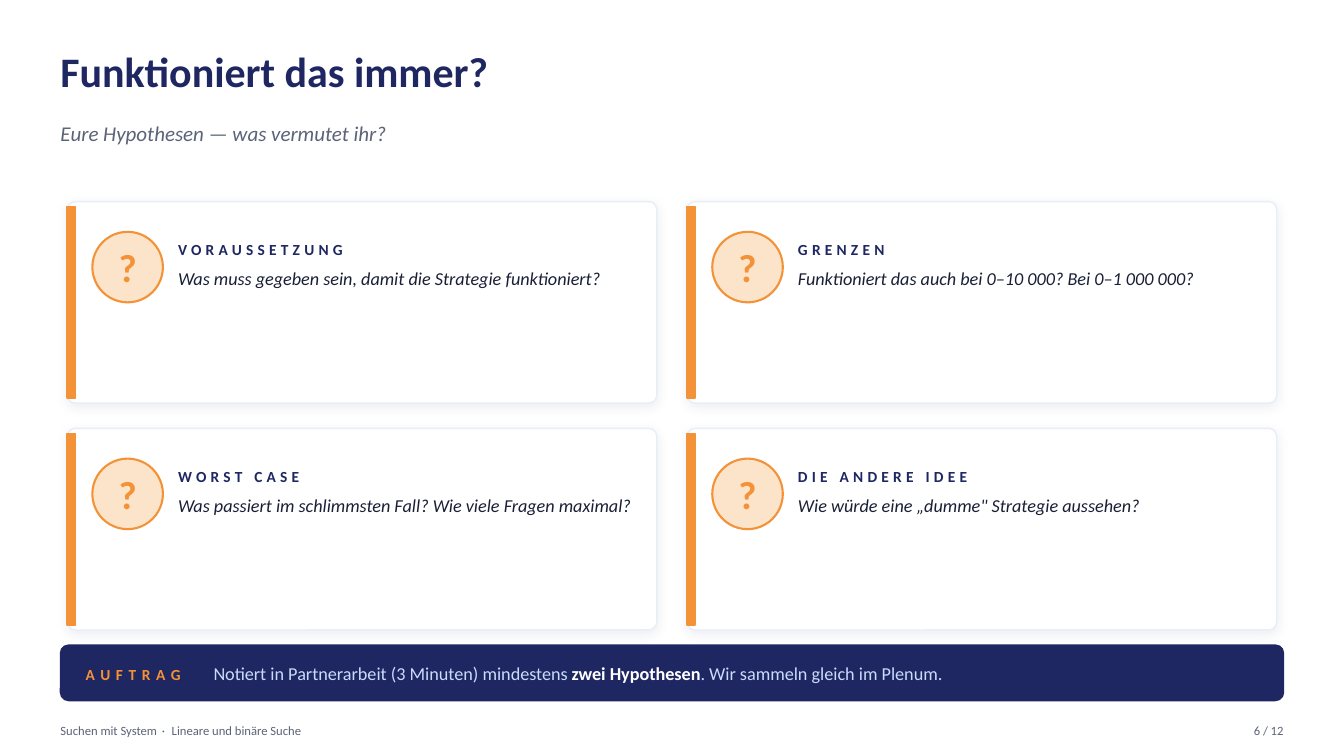
from lxml.etree import SubElement
from pptx import Presentation
from pptx.dml.color import RGBColor
from pptx.enum.shapes import MSO_SHAPE
from pptx.enum.text import MSO_ANCHOR, PP_ALIGN
from pptx.oxml.ns import qn
from pptx.util import Pt

NAVY = "1E2761"
ORANGE = "F39237"
PEACH = "FCE4CB"
GREY = "5A6378"
INK = "1A1F36"
PALE = "CADCFC"
BORDER = "E8EEF7"
WHITE = "FFFFFF"

SLIDE_WIDTH, SLIDE_HEIGHT = 960, 540
MARGIN = 43.2
CONTENT_WIDTH = SLIDE_WIDTH - 2 * MARGIN
CARD_WIDTH, CARD_HEIGHT = 421.2, 144
CARD_GAP_X, CARD_GAP_Y = 21.6, 18
CARDS_LEFT = (SLIDE_WIDTH - 2 * CARD_WIDTH - CARD_GAP_X) / 2
CARDS_TOP = 144

HYPOTHESES = [
    ("VORAUSSETZUNG", "Was muss gegeben sein, damit die Strategie funktioniert?"),
    ("GRENZEN", "Funktioniert das auch bei 0–10 000? Bei 0–1 000 000?"),
    ("WORST CASE", "Was passiert im schlimmsten Fall? Wie viele Fragen maximal?"),
    ("DIE ANDERE IDEE", 'Wie würde eine „dumme" Strategie aussehen?'),
]


def color(value):
    return RGBColor.from_string(value)


def add_run(paragraph, text, size=13, fill=INK, bold=False, italic=False, spacing=0):
    run = paragraph.add_run()
    run.text = text
    run.font.name = "Calibri"
    run.font.size = Pt(size)
    run.font.bold = bold
    run.font.italic = italic
    run.font.color.rgb = color(fill)
    if spacing:
        run.font._element.set("spc", str(round(spacing * 100)))


def add_text_box(slide, left, top, width, height, anchor=MSO_ANCHOR.TOP, align=PP_ALIGN.LEFT):
    box = slide.shapes.add_textbox(Pt(left), Pt(top), Pt(width), Pt(height))
    frame = box.text_frame
    frame.word_wrap = True
    frame.margin_left = frame.margin_right = frame.margin_top = frame.margin_bottom = 0
    frame.vertical_anchor = anchor
    paragraph = frame.paragraphs[0]
    paragraph.alignment = align
    return paragraph


def add_text(slide, text, left, top, width, height,
             anchor=MSO_ANCHOR.TOP, align=PP_ALIGN.LEFT, **text_format):
    paragraph = add_text_box(slide, left, top, width, height, anchor, align)
    add_run(paragraph, text, **text_format)


def add_panel(slide, kind, left, top, width, height, fill, line, line_width=1, radius=None):
    shape = slide.shapes.add_shape(kind, Pt(left), Pt(top), Pt(width), Pt(height))
    shape.shadow.inherit = False
    shape.fill.solid()
    shape.fill.fore_color.rgb = color(fill)
    shape.line.color.rgb = color(line)
    shape.line.width = Pt(line_width)
    if radius is not None:
        shape.adjustments[0] = radius
    return shape


def add_soft_shadow(shape):
    effects = shape.element.spPr.find(qn("a:effectLst"))
    shadow = SubElement(effects, qn("a:outerShdw"), blurRad=str(Pt(8)), dist=str(Pt(2)),
                        dir="5400000", algn="bl", rotWithShape="0")
    shadow_color = SubElement(shadow, qn("a:srgbClr"), val=NAVY)
    SubElement(shadow_color, qn("a:alpha"), val="8000")


def add_tab_stop(paragraph, position):
    tab_list = SubElement(paragraph._p.get_or_add_pPr(), qn("a:tabLst"))
    SubElement(tab_list, qn("a:tab"), pos=str(Pt(position)), algn="l")


def add_hypothesis_card(slide, left, top, heading, question):
    card = add_panel(slide, MSO_SHAPE.ROUNDED_RECTANGLE, left, top, CARD_WIDTH, CARD_HEIGHT,
                     WHITE, BORDER, radius=0.04)
    add_soft_shadow(card)
    add_panel(slide, MSO_SHAPE.RECTANGLE, left, top + 3.6, 5.76, CARD_HEIGHT - 7.2, ORANGE, ORANGE)
    badge = (left + 18, top + 21.6, 50.4, 50.4)
    add_panel(slide, MSO_SHAPE.OVAL, *badge, PEACH, ORANGE, line_width=1.5)
    add_text(slide, "?", *badge, anchor=MSO_ANCHOR.MIDDLE, align=PP_ALIGN.CENTER,
             size=28, fill=ORANGE, bold=True)
    text_left, text_width = left + 79.2, CARD_WIDTH - 93.6
    add_text(slide, heading, text_left, top + 21.6, text_width, 25.2,
             anchor=MSO_ANCHOR.MIDDLE, size=11, fill=NAVY, bold=True, spacing=3)
    add_text(slide, question, text_left, top + 46.8, text_width, 82.8, italic=True)


def add_task_bar(slide):
    top, height = 460.8, 39.6
    add_panel(slide, MSO_SHAPE.ROUNDED_RECTANGLE, MARGIN, top, CONTENT_WIDTH, height,
              NAVY, NAVY, radius=0.145)
    paragraph = add_text_box(slide, MARGIN + 18, top, CONTENT_WIDTH - 36, height, MSO_ANCHOR.MIDDLE)
    add_tab_stop(paragraph, 91.3)
    add_run(paragraph, "AUFTRAG\t", size=11, fill=ORANGE, bold=True, spacing=4)
    add_run(paragraph, "Notiert in Partnerarbeit (3 Minuten) mindestens ", fill=PALE)
    add_run(paragraph, "zwei Hypothesen", fill=WHITE, bold=True)
    add_run(paragraph, ". Wir sammeln gleich im Plenum.", fill=PALE)


def add_footer(slide):
    top, height = 511.2, 21.6
    paragraph = add_text_box(slide, MARGIN, top, 576, height, MSO_ANCHOR.MIDDLE)
    add_run(paragraph, "Suchen mit System", size=9, fill=GREY)
    add_run(paragraph, " · ", size=9, fill=GREY, spacing=1.4)
    add_run(paragraph, "Lineare und binäre Suche", size=9, fill=GREY)
    add_text(slide, "6 / 12", SLIDE_WIDTH - MARGIN - 57.6, top, 57.6, height,
             anchor=MSO_ANCHOR.MIDDLE, align=PP_ALIGN.RIGHT, size=9, fill=GREY)


def main():
    presentation = Presentation()
    presentation.slide_width = Pt(SLIDE_WIDTH)
    presentation.slide_height = Pt(SLIDE_HEIGHT)
    slide = presentation.slides.add_slide(presentation.slide_layouts[6])
    add_text(slide, "Funktioniert das immer?", MARGIN, 32.4, CONTENT_WIDTH, 54,
             size=30, fill=NAVY, bold=True)
    add_text(slide, "Eure Hypothesen — was vermutet ihr?", MARGIN, 86.4, CONTENT_WIDTH, 28.8,
             size=15, fill=GREY, italic=True)
    for index, (heading, question) in enumerate(HYPOTHESES):
        row, column = divmod(index, 2)
        left = CARDS_LEFT + column * (CARD_WIDTH + CARD_GAP_X)
        top = CARDS_TOP + row * (CARD_HEIGHT + CARD_GAP_Y)
        add_hypothesis_card(slide, left, top, heading, question)
    add_task_bar(slide)
    add_footer(slide)
    presentation.save("out.pptx")


if __name__ == "__main__":
    main()
